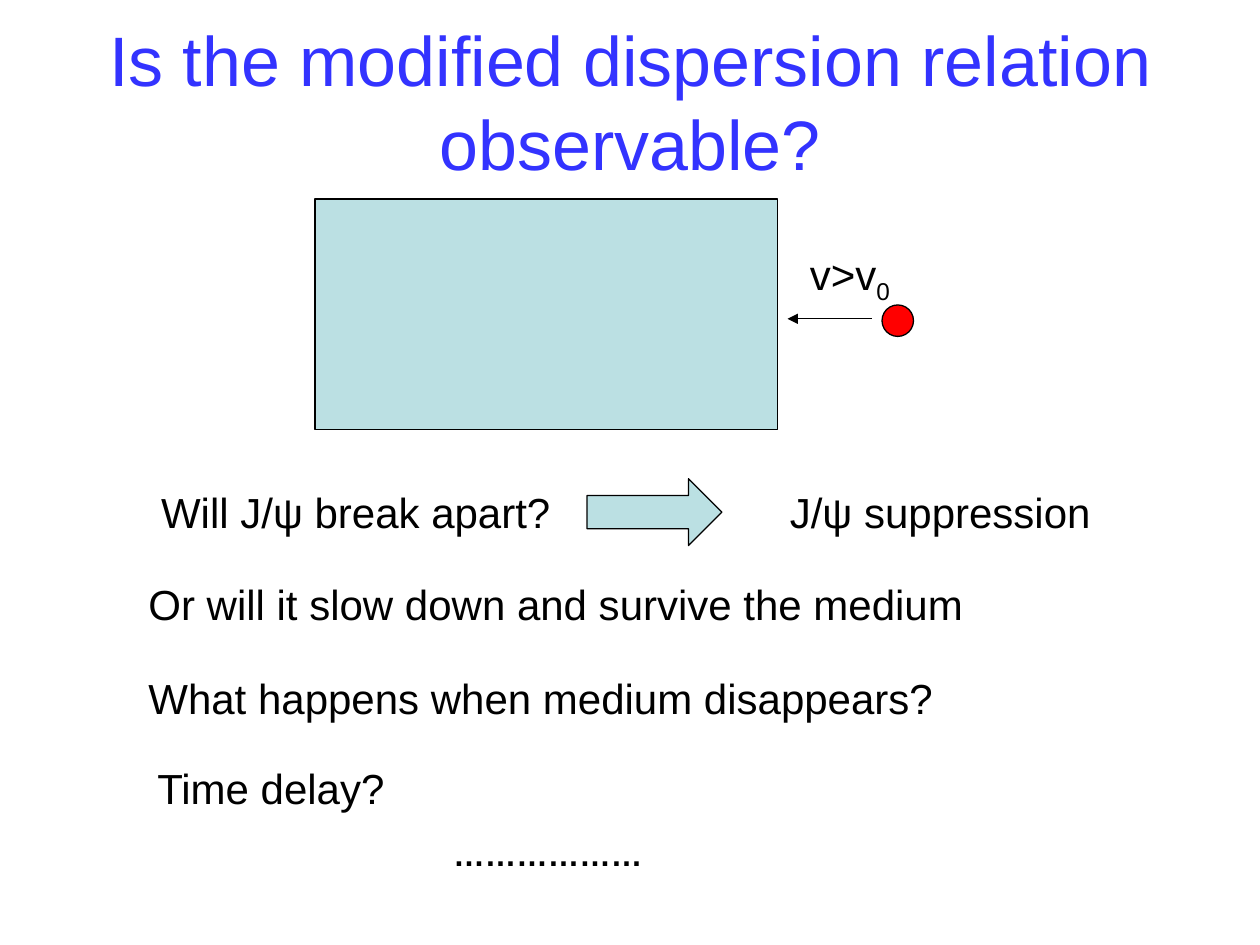
from pptx import Presentation
from pptx.dml.color import RGBColor
from pptx.enum import shapes, text
from pptx.oxml.ns import qn
from pptx.util import Inches, Pt
from lxml import etree

COLORS = {"title": "3333FF", "text": "000000", "line": "000000",
          "medium": "BBE0E3", "particle": "FF0000"}


def add_text(slide, content, left, top, width, height, size=24, color="text", wrap=False):
    box = slide.shapes.add_textbox(Inches(left), Inches(top), Inches(width), Inches(height))
    box.text_frame.word_wrap = wrap
    paragraph = box.text_frame.paragraphs[0]
    paragraph.add_run().text = content
    paragraph.font.name = "Arial"
    paragraph.font.size = Pt(size)
    paragraph.font.color.rgb = RGBColor.from_string(COLORS[color])
    return box


def add_outlined(slide, kind, left, top, width, height, color):
    shape = slide.shapes.add_shape(kind, Inches(left), Inches(top), Inches(width), Inches(height))
    shape.shadow.inherit = False
    shape.fill.solid()
    shape.fill.fore_color.rgb = RGBColor.from_string(COLORS[color])
    shape.line.color.rgb = RGBColor.from_string(COLORS["line"])
    shape.line.width = Pt(0.75)
    return shape


presentation = Presentation()
presentation.slide_width = Inches(10)
presentation.slide_height = Inches(7.5)
slide = presentation.slides.add_slide(presentation.slide_layouts[6])

title = add_text(slide, "Is the modified dispersion relation observable?",
                 0.5, 0.17, 9, 1.25, size=40, color="title", wrap=True)
title.text_frame.vertical_anchor = text.MSO_ANCHOR.MIDDLE
title.text_frame.paragraphs[0].alignment = text.PP_ALIGN.CENTER

add_outlined(slide, shapes.MSO_SHAPE.RECTANGLE, 2.5, 1.58, 3.67, 1.83, "medium")
add_outlined(slide, shapes.MSO_SHAPE.OVAL, 7, 2.42, 0.25, 0.25, "particle")

motion = slide.shapes.add_connector(shapes.MSO_CONNECTOR.STRAIGHT,
                                    Inches(6.92), Inches(2.53), Inches(6.25), Inches(2.53))
motion.line.color.rgb = RGBColor.from_string(COLORS["line"])
motion.line.width = Pt(0.75)
etree.SubElement(motion.line._get_or_add_ln(), qn("a:tailEnd"), type="triangle")
etree.SubElement(motion._element.spPr, qn("a:effectLst"))

velocity = add_text(slide, "v>v", 6.33, 1.92, 0.89, 0.5)
subscript = velocity.text_frame.paragraphs[0].add_run()
subscript.text = "0"
subscript.font._element.set("baseline", "-25000")

for content, left, top, width in [
    ("Will J/ψ break apart?", 1.18, 3.81, 3.39),
    ("Or will it slow down and survive the medium", 1.08, 4.54, 6.67),
    ("What happens when medium disappears?", 1.08, 5.29, 6.43),
    ("Time delay?", 1.15, 6, 2.02),
    ("J/ψ suppression", 6.17, 3.81, 2.75),
]:
    add_text(slide, content, left, top, width, 0.5)

add_outlined(slide, shapes.MSO_SHAPE.RIGHT_ARROW, 4.66, 3.8, 1.07, 0.53, "medium")

ellipsis = add_text(slide, "………………", 3.5, 6.58, 1.72, 0.4, size=18)
ellipsis.text_frame.paragraphs[0].font.bold = True

presentation.save("out.pptx")
